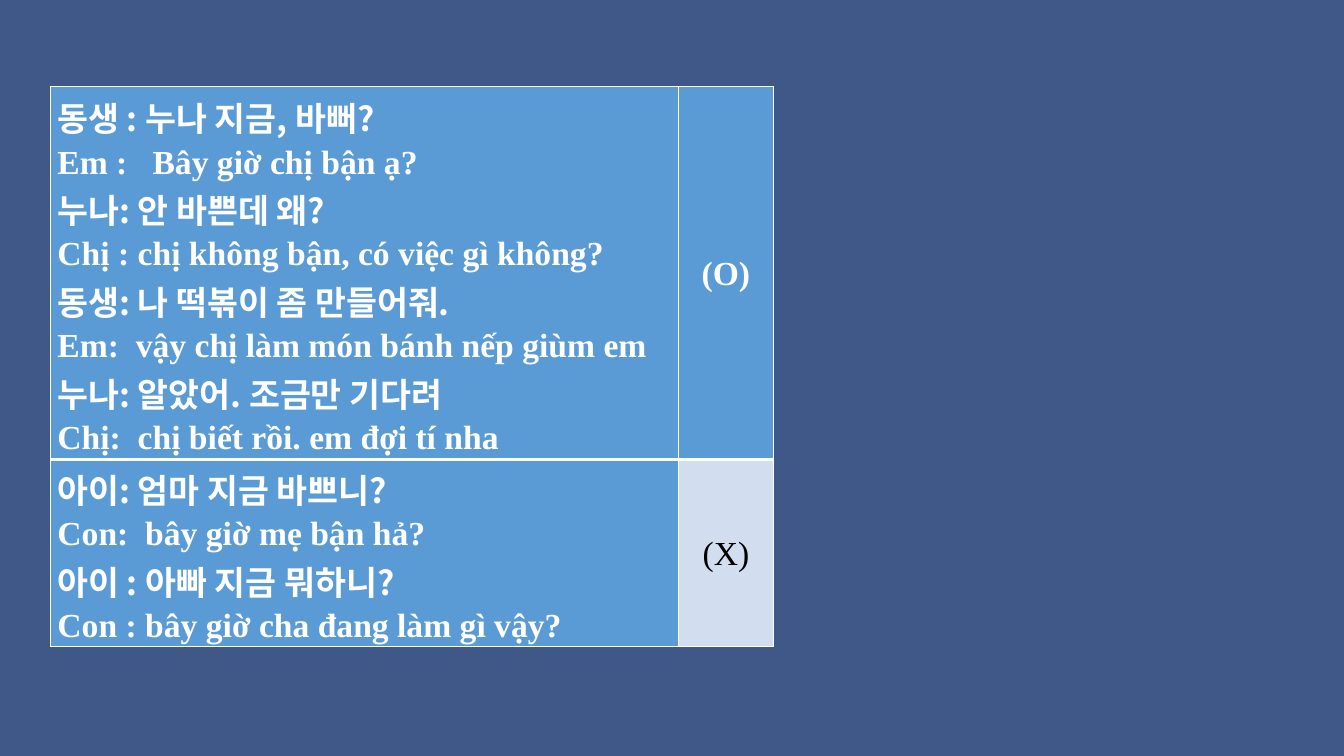
"""Build a slide with a table of Korean and Vietnamese dialogues marked right or wrong."""
from lxml.etree import SubElement
from pptx import Presentation
from pptx.dml.color import RGBColor
from pptx.enum.text import MSO_ANCHOR as Anchor, PP_ALIGN as Align
from pptx.oxml.ns import qn
from pptx.util import Inches, Pt

DIALOGUES = [
    {
        "lines": [
            ("동생 : 누나 지금, 바뻐?", "Em :   Bây giờ chị bận ạ?"),
            ("누나: 안 바쁜데 왜?", "Chị : chị không bận, có việc gì không?"),
            ("동생: 나 떡볶이 좀 만들어줘.", "Em:  vậy chị làm món bánh nếp giùm em"),
            ("누나: 알았어. 조금만 기다려", "Chị:  chị biết rồi. em đợi tí nha"),
        ],
        "mark": "(O)",
        "mark_style": {"fill": "blue", "color": "white", "bold": True},
        "edges": {"lnL": 1, "lnR": 1, "lnT": 1, "lnB": 3},
    },
    {
        "lines": [
            ("아이: 엄마 지금 바쁘니?", "Con:  bây giờ mẹ bận hả?"),
            ("아이 : 아빠 지금 뭐하니?", "Con : bây giờ cha đang làm gì vậy?"),
        ],
        "mark": "(X)",
        "mark_style": {"fill": "pale", "color": "black", "bold": False},
        "edges": {"lnL": 1, "lnR": 1, "lnT": 3, "lnB": 1},
    },
]
THEME = {
    "page": "405888", "blue": "5B9BD5", "pale": "D2DEEF", "white": "FFFFFF", "black": "000000",
    "korean": "Noto Sans CJK KR", "vietnamese": "Times New Roman",
    "size": Pt(24), "spacing": 1.07,
}
LINE_STYLE = {"fill": "blue", "color": "white", "bold": True}
LEFT, TOP = 0.5, 0.86
COLUMN_WIDTHS = [6.23, 0.94]
PAIR_HEIGHT = 0.925
CELL_FORMAT = {
    "margin_left": Inches(0.07), "margin_right": Inches(0.07),
    "margin_top": 0, "margin_bottom": 0, "vertical_anchor": Anchor.MIDDLE,
}


def apply(target, values):
    for name, value in values.items():
        setattr(target, name, value)


def color(name):
    return RGBColor.from_string(THEME[name])


def draw_edges(cell, edges):
    properties = cell._tc.get_or_add_tcPr()
    for position, (edge, width) in enumerate(edges.items()):
        line = SubElement(properties, qn(f"a:{edge}"), w=str(Pt(width)))
        fill = SubElement(line, qn("a:solidFill"))
        SubElement(fill, qn("a:srgbClr"), val=THEME["white"])
        properties.remove(line)
        properties.insert(position, line)


def write_cell(cell, lines, style, align, edges):
    apply(cell, CELL_FORMAT)
    cell.fill.solid()
    cell.fill.fore_color.rgb = color(style["fill"])
    draw_edges(cell, edges)
    frame = cell.text_frame
    for index, (text, language) in enumerate(lines):
        para = frame.add_paragraph() if index else frame.paragraphs[0]
        apply(para, {"alignment": align, "line_spacing": THEME["spacing"]})
        span = para.add_run()
        span.text = text
        apply(span.font, {"size": THEME["size"], "bold": style["bold"], "name": THEME[language]})
        span.font.color.rgb = color(style["color"])
        SubElement(span._r.get_or_add_rPr(), qn("a:ea"), typeface=THEME[language])


def main():
    deck = Presentation()
    apply(deck, {"slide_width": Inches(13.33), "slide_height": Inches(7.5)})
    page = deck.slides.add_slide(deck.slide_layouts[6])
    page.background.fill.solid()
    page.background.fill.fore_color.rgb = color("page")

    heights = [PAIR_HEIGHT * len(dialogue["lines"]) for dialogue in DIALOGUES]
    table = page.shapes.add_table(
        len(heights), len(COLUMN_WIDTHS), Inches(LEFT), Inches(TOP),
        Inches(sum(COLUMN_WIDTHS)), Inches(sum(heights)),
    ).table
    apply(table, {"first_row": False, "horz_banding": False})
    for column, width in zip(table.columns, COLUMN_WIDTHS):
        column.width = Inches(width)
    for index, (dialogue, height) in enumerate(zip(DIALOGUES, heights)):
        table.rows[index].height = Inches(height)
        lines = [
            line for pair in dialogue["lines"] for line in zip(pair, ("korean", "vietnamese"))
        ]
        mark = [(dialogue["mark"], "vietnamese")]
        edges = dialogue["edges"]
        write_cell(table.cell(index, 0), lines, LINE_STYLE, Align.LEFT, edges)
        write_cell(table.cell(index, 1), mark, dialogue["mark_style"], Align.CENTER, edges)
    deck.save("out.pptx")


if __name__ == "__main__":
    main()
